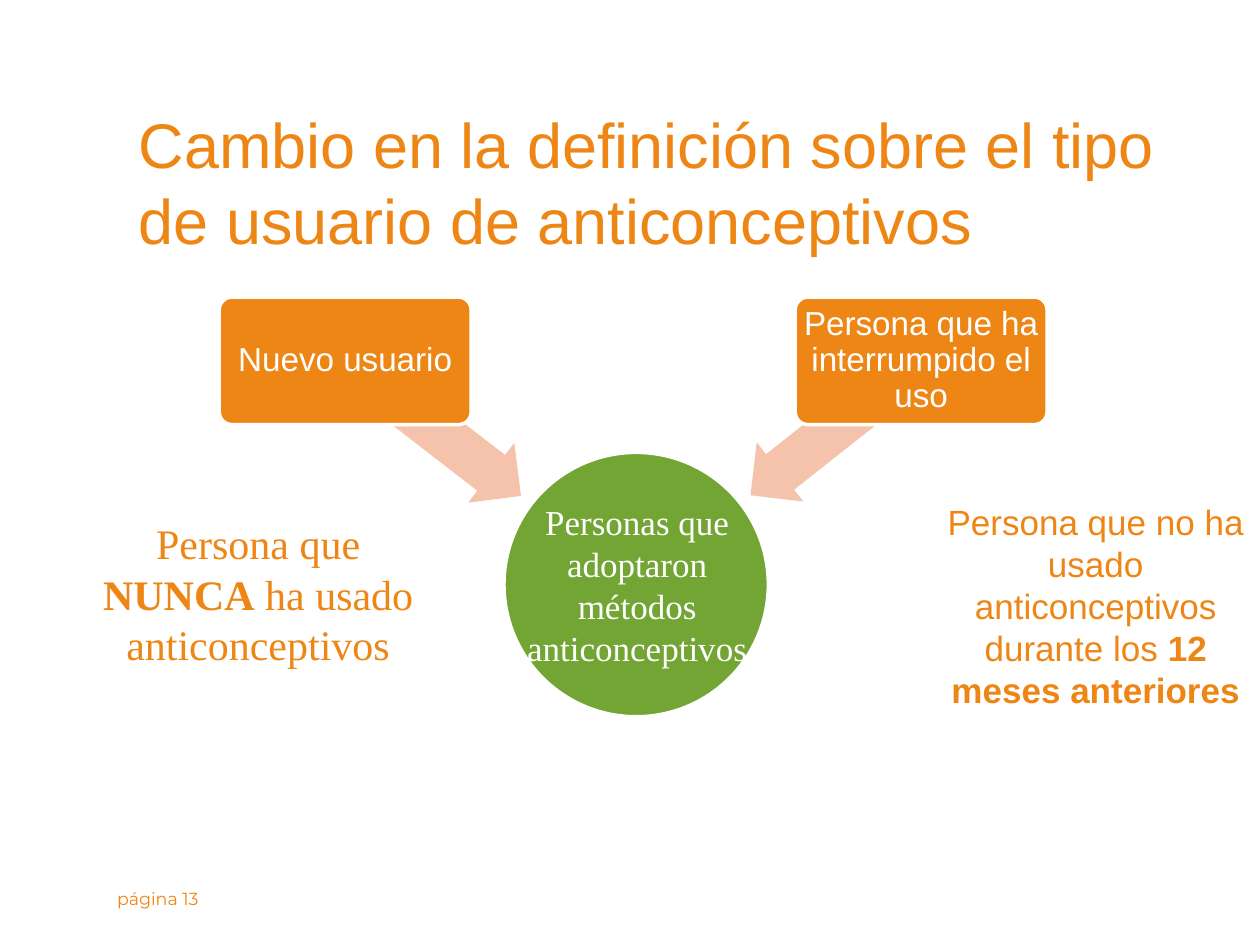
from pptx import Presentation
from pptx.dml.color import RGBColor
from pptx.enum.shapes import MSO_SHAPE
from pptx.enum.text import MSO_ANCHOR, MSO_AUTO_SIZE, PP_ALIGN
from pptx.util import Cm, Pt

ELLIPSE = MSO_SHAPE.OVAL
ARROW = MSO_SHAPE.LEFT_ARROW
ROUNDED = MSO_SHAPE.ROUNDED_RECTANGLE
MIDDLE = MSO_ANCHOR.MIDDLE
NO_FIT = MSO_AUTO_SIZE.NONE
LEFT, CENTER = PP_ALIGN.LEFT, PP_ALIGN.CENTER

COLORS = {
    "orange": "EE8616",
    "green": "73A534",
    "peach": "F5C3AC",
    "white": "FFFFFF",
}


def write(frame, spans, font, size, color, align=CENTER):
    """Fill the first paragraph with (text, bold) spans."""
    frame.word_wrap = True
    frame.auto_size = NO_FIT
    para = frame.paragraphs[0]
    para.alignment = align
    for text, bold in spans:
        span = para.add_run()
        span.text = text
        span.font.name = font
        span.font.size = Pt(size)
        span.font.bold = bold
        span.font.color.rgb = RGBColor.from_string(COLORS[color])


def add_shape(kind, left, top, width, height, fill, outlined=True):
    shape = page.shapes.add_shape(kind, Cm(left), Cm(top), Cm(width), Cm(height))
    shape.shadow.inherit = False
    shape.fill.solid()
    shape.fill.fore_color.rgb = RGBColor.from_string(COLORS[fill])
    if outlined:
        shape.line.color.rgb = RGBColor.from_string(COLORS["white"])
        shape.line.width = Pt(2)
    else:
        shape.line.fill.background()
    return shape


deck = Presentation()
deck.slide_width, deck.slide_height = Cm(25.4), Cm(19.05)
page = deck.slides.add_slide(deck.slide_layouts[5])

title = page.shapes.title
title.left, title.top, title.width, title.height = Cm(2.54), Cm(2.74), Cm(21.8), Cm(1.83)
title.text_frame.vertical_anchor = MIDDLE
write(title.text_frame,
      [("Cambio en la definición sobre el tipo de usuario de anticonceptivos", False)],
      "Arial", 36, "orange", LEFT)

add_shape(ELLIPSE, 10.16, 9.12, 5.33, 5.33, "green")

# Each user type: label, box left, arrow left, arrow width, arrow rotation
user_types = [
    ("Nuevo usuario", 4.42, 6.5, 4.47, 217.7),
    ("Persona que ha interrumpido el uso", 16.03, 14.66, 4.37, 321.7),
]
for label, box_left, arrow_left, arrow_width, rotation in user_types:
    arrow = add_shape(ARROW, arrow_left, 7.87, arrow_width, 1.52, "peach", outlined=False)
    arrow.adjustments[0], arrow.adjustments[1] = 0.6, 0.5
    arrow.rotation = rotation

    box = add_shape(ROUNDED, box_left, 5.99, 5.08, 2.57, "orange")
    box.adjustments[0] = 0.1
    frame = box.text_frame
    frame.margin_left = frame.margin_right = Cm(0.1)
    frame.margin_top = frame.margin_bottom = Cm(0.1)
    frame.vertical_anchor = MIDDLE
    write(frame, [(label, False)], "Arial", 19, "white")
    frame.paragraphs[0].line_spacing = 0.9

# Each note: left, top, width, height, spans, font, size, color, alignment
notes = [
    (1.75, 10.31, 6.91, 3.33,
     [("Persona que ", False), ("NUNCA", True), (" ha usado anticonceptivos", False)],
     "Times New Roman", 24, "orange", CENTER),
    (18.57, 9.96, 7.04, 4.52,
     [("Persona que no ha usado anticonceptivos durante los ", False),
      ("12 meses anteriores", True)],
     "Arial", 20, "orange", CENTER),
    (10.24, 9.96, 5.21, 3.68,
     [("Personas que adoptaron métodos anticonceptivos", False)],
     "Times New Roman", 20, "white", CENTER),
    (2.11, 17.78, 5.28, 0.84, [("página 13", False)], "Montserrat", 10, "orange", LEFT),
]
for left, top, width, height, *content in notes:
    box = page.shapes.add_textbox(Cm(left), Cm(top), Cm(width), Cm(height))
    write(box.text_frame, *content)

deck.save("out.pptx")
